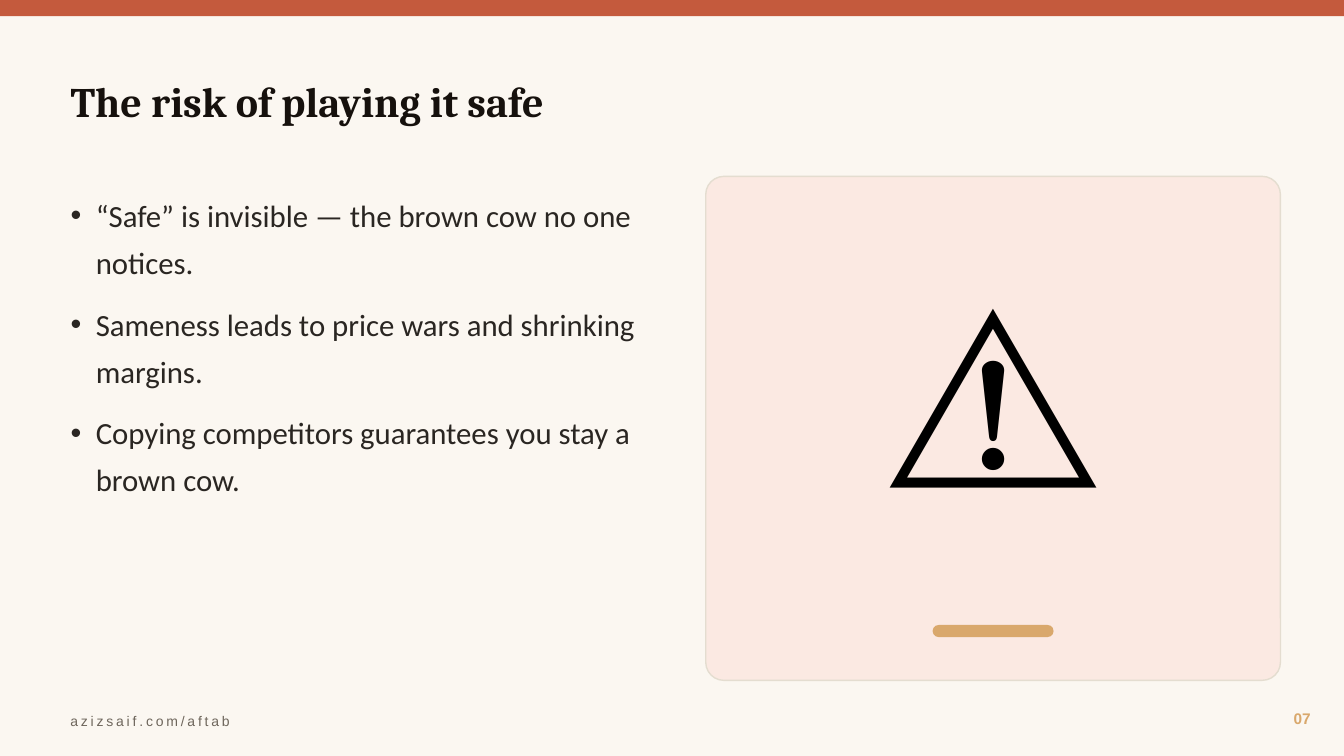
from lxml import etree
from pptx import Presentation
from pptx.dml.color import RGBColor
from pptx.enum import shapes, text
from pptx.oxml import ns
from pptx.util import Inches, Pt

CREAM = RGBColor(0xFB, 0xF7, 0xF1)
RUST = RGBColor(0xC4, 0x5A, 0x3D)
INK = RGBColor(0x16, 0x11, 0x0D)
BODY = RGBColor(0x2A, 0x26, 0x22)
BLUSH = RGBColor(0xFB, 0xE9, 0xE2)
BORDER = RGBColor(0xE4, 0xDD, 0xD0)
GOLD = RGBColor(0xD9, 0xA8, 0x6C)
GREY = RGBColor(0x6E, 0x66, 0x5C)
BLACK = RGBColor(0, 0, 0)

RECTANGLE = shapes.MSO_SHAPE.RECTANGLE
ROUNDED = shapes.MSO_SHAPE.ROUNDED_RECTANGLE
LEFT, CENTER, RIGHT = text.PP_ALIGN.LEFT, text.PP_ALIGN.CENTER, text.PP_ALIGN.RIGHT
MIDDLE, TOP = text.MSO_ANCHOR.MIDDLE, text.MSO_ANCHOR.TOP

WIDTH, HEIGHT = 13.33, 7.5
POINTS = [
    "“Safe” is invisible — the brown cow no one notices.",
    "Sameness leads to price wars and shrinking margins.",
    "Copying competitors guarantees you stay a brown cow.",
]


def place(shape, left, top, width, height):
    shape.left, shape.top = Inches(left), Inches(top)
    shape.width, shape.height = Inches(width), Inches(height)


def style_text(shape, font, size, color, bold=False, align=LEFT, anchor=MIDDLE, spacing=0):
    frame = shape.text_frame
    frame.word_wrap = True
    frame.auto_size = text.MSO_AUTO_SIZE.NONE
    frame.vertical_anchor = anchor
    for para in frame.paragraphs:
        para.alignment = align
        for span in para.runs:
            span.font.name = font
            span.font.size = Pt(size)
            span.font.bold = bold
            span.font.color.rgb = color
            if spacing:
                span.font._element.set("spc", str(spacing * 100))


def add_label(page, box, words, *style, **options):
    label = page.shapes.add_textbox(*map(Inches, box))
    label.text_frame.text = words
    style_text(label, *style, **options)


def add_block(page, kind, box, fill, line=None, rounding=None):
    block = page.shapes.add_shape(kind, *map(Inches, box))
    block.shadow.inherit = False
    block.fill.solid()
    block.fill.fore_color.rgb = fill
    if line is None:
        block.line.fill.background()
    else:
        block.line.color.rgb = line
        block.line.width = Pt(1)
    if rounding is not None:
        block.adjustments[0] = rounding


def fill_title(page, box, words):
    title = page.shapes.title
    place(title, *box)
    title.text_frame.text = words
    style_text(title, "Cambria", 30, INK, bold=True)


def fill_points(page, box, points):
    body = page.placeholders[1]
    place(body, *box)
    body.text_frame.text = "\n".join(points)
    for para in body.text_frame.paragraphs:
        properties = para._p.get_or_add_pPr()
        properties.set("marL", str(Inches(0.25)))
        properties.set("indent", str(-Inches(0.25)))
        etree.SubElement(properties, ns.qn("a:buChar")).set("char", "•")
        para.line_spacing = 1.28
        para.space_before = Pt(0)
        para.space_after = Pt(10)
    style_text(body, "Calibri", 22, BODY, anchor=TOP)


def add_warning_card(page, box):
    left, top, width, height = box
    bar_width = 1.2
    add_block(page, ROUNDED, box, BLUSH, BORDER, 0.036)
    add_label(page, (left, top, width, height - 0.9), "⚠️", "Calibri", 150, BLACK, align=CENTER)
    bar = (left + (width - bar_width) / 2, top + height - 0.55, bar_width, 0.12)
    add_block(page, ROUNDED, bar, GOLD, rounding=0.5)


def add_footer(page, box, address, number):
    left, top, width, height = box
    add_label(page, (left + width - 0.9, top, 0.9, height), number,
              "Arial", 11, GOLD, bold=True, align=RIGHT)
    add_label(page, (left, top + 0.05, 8, height - 0.05), address,
              "Arial", 10, GREY, spacing=2)


def build_slide(deck):
    page = deck.slides.add_slide(deck.slide_layouts[1])
    page.background.fill.solid()
    page.background.fill.fore_color.rgb = CREAM
    add_block(page, RECTANGLE, (0, 0, WIDTH, 0.16), RUST)
    fill_title(page, (0.6, 0.5, 12.1, 1), "The risk of playing it safe")
    add_warning_card(page, (7, 1.75, 5.7, 5))
    fill_points(page, (0.6, 1.8, 6, 5), POINTS)
    add_footer(page, (0.6, 6.95, 12.5, 0.35), "azizsaif.com/aftab", "07")


def main():
    deck = Presentation()
    deck.slide_width, deck.slide_height = Inches(WIDTH), Inches(HEIGHT)
    build_slide(deck)
    deck.save("out.pptx")


if __name__ == "__main__":
    main()
